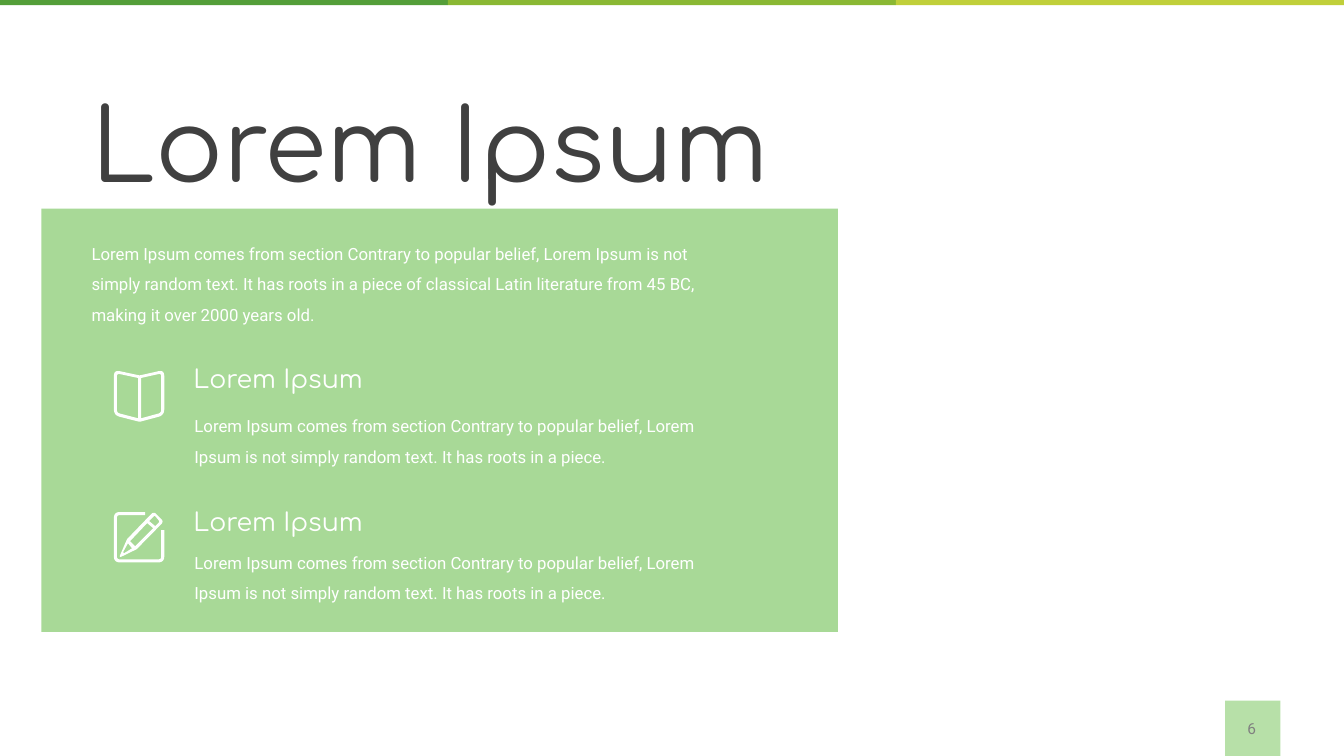
from math import dist
from pptx import Presentation
from pptx import util as u
from pptx.dml import color
from pptx.enum import shapes, text
from pptx.oxml import parse_xml
from pptx.oxml.ns import nsdecls

WIDE, HIGH = 13.33, 7.5
INTRO = ("Lorem Ipsum comes from section Contrary to popular belief, Lorem Ipsum is not "
         "simply random text. It has roots in a piece of classical Latin literature "
         "from 45 BC, making it over 2000 years old.")
NOTE = ("Lorem Ipsum comes from section Contrary to popular belief, Lorem Ipsum is not "
        "simply random text. It has roots in a piece.")

BOOK = [
    [(50, -1, 6), (25.5, 4.5, 1.5), (0, -1, 6), (0, 44, 6), (25.5, 50.5, 1.5), (50, 44, 6)],
    [(24, 47, 0), (3, 41.5, 3), (3, 2.5, 3), (24, 7, 0)],
    [(27, 47, 0), (47, 41.5, 3), (47, 2.5, 3), (27, 7, 0)],
]
PENCIL = [
    [(47, 18, 0), (47, 47, 3), (3, 47, 3), (3, 3, 3), (31, 3, 0), (31, 0, 0),
     (0, 0, 6), (0, 50, 6), (50, 50, 6), (50, 18, 0)],
    [(13, 27, 1), (5, 45.5, 3), (22.5, 37, 1), (49.5, 9.5, 3.5), (39.5, -0.5, 3.5)],
    [(39, 5, 0), (40.5, 3.5, 1), (45.5, 9.5, 1.5), (41, 14, 0), (35, 9, 0)],
    [(33, 11, 0), (39, 16, 0), (21, 34, 0), (16, 29, 0)],
    [(18, 36, 0), (10, 41, 1), (9, 40, 1), (14, 31, 0)],
]


def rgb(code):
    return color.RGBColor.from_string(code)


def bend(ring):
    dots = []
    for i, (x, y, r) in enumerate(ring):
        if not r:
            dots.append((x * 100, y * 100))
            continue
        ends = []
        for px, py, _ in (ring[i - 1], ring[(i + 1) % len(ring)]):
            part = r / dist((x, y), (px, py))
            ends.append((x + (px - x) * part, y + (py - y) * part))
        (ax, ay), (bx, by) = ends
        for k in range(7):
            t = k / 6
            a, m, b = (1 - t) ** 2, 2 * t * (1 - t), t * t
            dots.append(((a * ax + m * x + b * bx) * 100, (a * ay + m * y + b * by) * 100))
    return dots


class Page:
    head = {"name": "Comfortaa", "size": u.Pt(18)}
    body = {"name": "Roboto", "size": u.Pt(12)}

    def __init__(self, deck):
        self.slide = deck.slides.add_slide(deck.slide_layouts[5])
        self.items = self.slide.shapes

    def paint(self, shape, fill, alpha=None):
        shape.shadow.inherit = False
        shape.fill.solid()
        shape.fill.fore_color.rgb = rgb(fill)
        shape.line.fill.background()
        if alpha:
            tone = shape.element.spPr.find(".//{*}solidFill/{*}srgbClr")
            tone.append(parse_xml(f'<a:alpha {nsdecls("a")} val="{alpha * 1000}"/>'))

    def block(self, x, y, w, h, fill, alpha=None):
        spot = map(u.Inches, (x, y, w, h))
        self.paint(self.items.add_shape(shapes.MSO_SHAPE.RECTANGLE, *spot), fill, alpha)

    def typeset(self, box, words, style, tint, wrap, align=text.PP_ALIGN.LEFT, gap=1.0):
        frame = box.text_frame
        form = {"word_wrap": wrap, "auto_size": text.MSO_AUTO_SIZE.SHAPE_TO_FIT_TEXT,
                "vertical_anchor": text.MSO_ANCHOR.TOP}
        for key, val in form.items():
            setattr(frame, key, val)
        para = frame.paragraphs[0]
        para.alignment, para.line_spacing = align, gap
        run = para.add_run()
        run.text = words
        for key, val in style.items():
            setattr(run.font, key, val)
        run.font.color.rgb = rgb(tint)

    def title(self, x, y, w, h, words):
        box = self.items.title
        for key, val in zip(("left", "top", "width", "height"), (x, y, w, h)):
            setattr(box, key, u.Inches(val))
        self.typeset(box, words, {**self.head, "size": u.Pt(72)}, "404040", False)

    def label(self, x, y, w, h, words, style, tint="FFFFFF", wrap=False, **more):
        box = self.items.add_textbox(*map(u.Inches, (x, y, w, h)))
        self.typeset(box, words, style, tint, wrap, **more)

    def prose(self, x, y, w, h, words):
        self.label(x, y, w, h, words, self.body, wrap=True, gap=1.5)

    def icon(self, x, y, rings):
        pen = None
        for ring in rings:
            first, *rest = bend(ring)
            if pen is None:
                pen = self.items.build_freeform(*first, scale=u.Inches(1) / 10000)
            else:
                pen.move_to(*first)
            pen.add_line_segments(rest, close=True)
        self.paint(pen.convert_to_shape(u.Inches(x), u.Inches(y)), "FFFFFF")


def main():
    deck = Presentation()
    deck.slide_width, deck.slide_height = u.Inches(WIDE), u.Inches(HIGH)
    page = Page(deck)

    page.block(12.15, 6.95, 0.55, 0.55, "B7E0A8")
    for i, fill in enumerate(("549E39", "8AB833", "C0CF3A")):
        page.block(i * WIDE / 3, 0, WIDE / 3, 0.05, fill)
    page.label(12.22, 7.08, 0.39, 0.29, "6", {**page.body, "size": u.Pt(11)},
               "808080", align=text.PP_ALIGN.CENTER)

    page.block(0.41, 2.07, 7.9, 4.2, "93D07D", 80)
    page.title(0.81, 0.76, 7.04, 1.31, "Lorem Ipsum")
    page.prose(0.81, 2.27, 6.33, 0.98, INTRO)
    for rings, mark, top, low in ((BOOK, 3.68, 3.56, 3.98), (PENCIL, 5.08, 4.97, 5.33)):
        page.icon(1.13, mark, rings)
        page.label(1.82, top, 1.91, 0.4, "Lorem Ipsum", page.head)
        page.prose(1.83, low, 5.32, 0.67, NOTE)

    deck.save("out.pptx")


if __name__ == "__main__":
    main()
